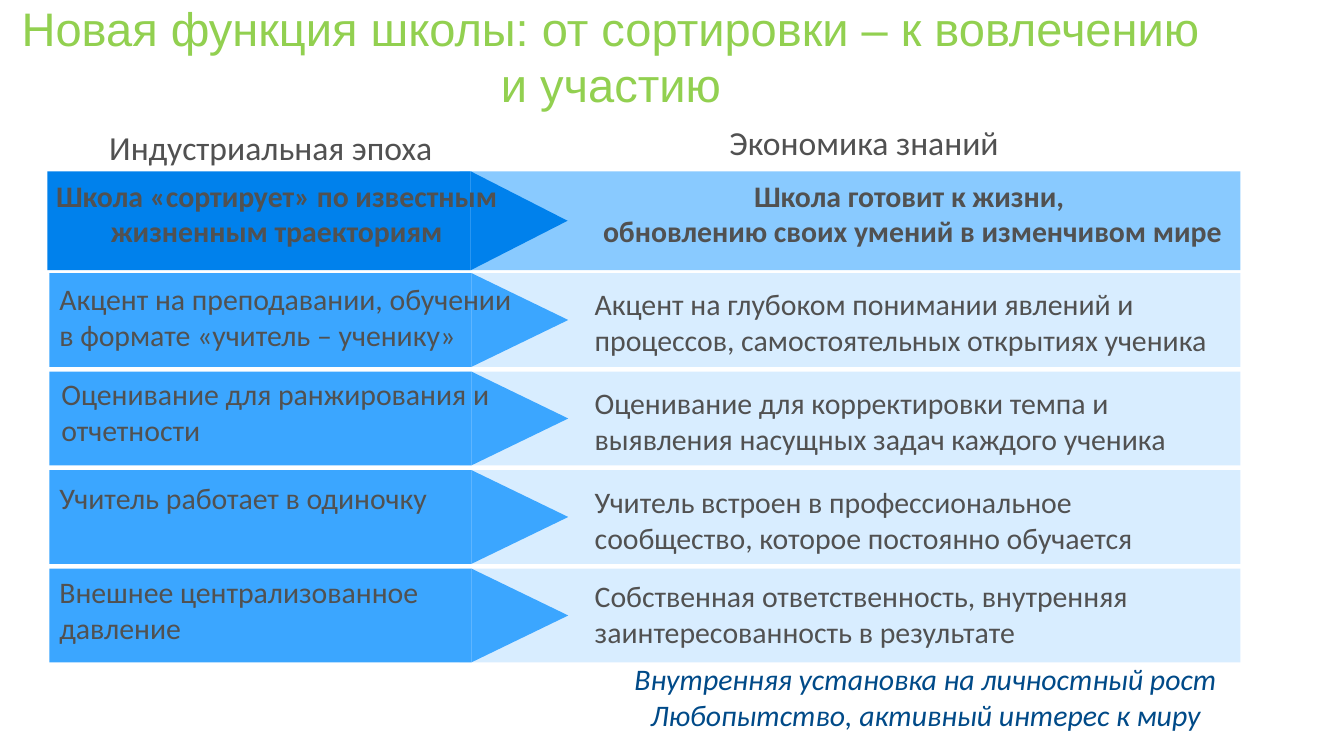
from pptx import Presentation
from pptx import util as u
from pptx.dml.color import RGBColor
from pptx.enum import shapes, text

COLORS = {
    "title": "92D050", "body": "515151", "note": "004A88",
    "head_arrow": "0081EC", "head_panel": "89CAFF",
    "row_arrow": "3BA6FF", "row_panel": "D8EDFF",
}
ALIGN = {"left": text.PP_ALIGN.LEFT, "center": text.PP_ALIGN.CENTER}


def write(tf, lines, size=21.3, color="body", font="Calibri", align="left",
          bold=False, italic=False, after=0):
    """Fill a text frame, one paragraph per item of lines."""
    for i, line in enumerate(lines):
        p = tf.paragraphs[0] if i == 0 else tf.add_paragraph()
        p.text = line
        p.alignment = ALIGN[align]
        p.space_after = u.Pt(after)
        for r in p.runs:
            r.font.size = u.Pt(size)
            r.font.name = font
            r.font.bold = bold
            r.font.italic = italic
            r.font.color.rgb = RGBColor.from_string(COLORS[color])


class Deck:
    """Places elements; every length is a percentage of the slide's size."""

    def __init__(self, width, height):
        self.prs = Presentation()
        self.prs.slide_width = u.Inches(width)
        self.prs.slide_height = u.Inches(height)
        self.s = self.prs.slides.add_slide(self.prs.slide_layouts[5])

    def x(self, share):
        return round(self.prs.slide_width * share / 100)

    def y(self, share):
        return round(self.prs.slide_height * share / 100)

    def box(self, left, top, width, height):
        return self.x(left), self.y(top), self.x(width), self.y(height)

    def title(self, line, *box, **fmt):
        sp = self.s.shapes.title
        sp.left, sp.top, sp.width, sp.height = self.box(*box)
        tf = sp.text_frame
        tf.word_wrap = True
        tf.auto_size = text.MSO_AUTO_SIZE.NONE
        tf.vertical_anchor = text.MSO_ANCHOR.BOTTOM
        write(tf, [line], **fmt)

    def text(self, lines, *box, **fmt):
        tf = self.s.shapes.add_textbox(*self.box(*box)).text_frame
        tf.word_wrap = True
        tf.auto_size = text.MSO_AUTO_SIZE.SHAPE_TO_FIT_TEXT
        write(tf, lines, **fmt)

    def shape(self, kind, box, color):
        sp = self.s.shapes.add_shape(kind, *box)
        sp.shadow.inherit = False
        sp.fill.solid()
        sp.fill.fore_color.rgb = RGBColor.from_string(COLORS[color])
        sp.line.fill.background()
        return sp

    def panel(self, *box, color):
        self.shape(shapes.MSO_SHAPE.RECTANGLE, self.box(*box), color)

    def arrow(self, left, top, width, height, tip, color):
        """A bar with a triangle, turned to the right, at its end."""
        self.panel(left, top, width, height, color=color)
        x, y, w, h = self.box(left + width, top, tip, height)
        turned = (x + (w - h) // 2, y + (h - w) // 2, h, w)
        sp = self.shape(shapes.MSO_SHAPE.ISOSCELES_TRIANGLE, turned, color)
        sp.rotation = 90


# Rows: left text, its left, offset and width; right text and its offset
ROWS = [
    ("Акцент на преподавании, обучении \nв формате «учитель – ученику»",
     3.68, 0.4, 39.5,
     "Акцент на глубоком понимании явлений и процессов, "
     "самостоятельных открытиях ученика", 1.07),
    ("Оценивание для ранжирования и отчетности", 3.83, -0.13, 34.3,
     "Оценивание для корректировки темпа и выявления насущных задач "
     "каждого ученика", 1.07),
    ("Учитель работает в одиночку", 3.68, 0.6, 34.3,
     "Учитель встроен в профессиональное сообщество, "
     "которое постоянно обучается", 1.2),
    ("Внешнее централизованное давление", 3.68, 0, 34.3,
     "Собственная ответственность, внутренняя заинтересованность "
     "в результате", 0.53),
]
ROW_TOP, ROW_STEP, ROW_HEIGHT = 36.13, 13.03, 12.4
HEAD_TOP, HEAD_HEIGHT = 22.67, 13.07
PANEL_LEFT, PANEL_WIDTH = 34.2, 58.1
TIP = 7.2


def main():
    deck = Deck(13.33, 7.5)

    # Title and column names
    deck.title("Новая функция школы: от сортировки – к вовлечению и участию",
               0, 0.4, 90.92, 15.07,
               size=33.6, color="title", font="Arial", align="center")
    deck.text(["Индустриальная эпоха"], 5.48, 16.13, 29.33, 6.67,
              size=24, align="center")
    deck.text(["Экономика знаний"], 51.84, 15.47, 24.91, 6.67,
              size=24, align="center")

    # Header row
    deck.panel(PANEL_LEFT, HEAD_TOP, PANEL_WIDTH, HEAD_HEIGHT,
               color="head_panel")
    deck.arrow(3.53, HEAD_TOP, 31.5, HEAD_HEIGHT, TIP, "head_arrow")
    deck.text(["Школа «сортирует» по известным жизненным траекториям"],
              2.7, 22.8, 35.78, 10.93, align="center", bold=True)
    deck.text(["Школа готовит к жизни, \n"
               "обновлению своих умений в изменчивом мире"],
              43.44, 22.8, 48.91, 10.93, align="center", bold=True)

    # Comparison rows
    for i, (old, left, old_dy, width, new, new_dy) in enumerate(ROWS):
        top = ROW_TOP + i * ROW_STEP
        deck.panel(PANEL_LEFT, top, PANEL_WIDTH, ROW_HEIGHT,
                   color="row_panel")
        deck.arrow(3.68, top, 31.4, ROW_HEIGHT, TIP, "row_arrow")
        deck.text([old], left, top + old_dy, width, 10.93, after=8)
        deck.text([new], 43.51, top + new_dy, 48.76, 10.93, after=8)

    # Closing note
    deck.text(["Внутренняя установка на личностный рост",
               "Любопытство, активный интерес к миру"],
              45.46, 86.8, 46.81, 10.93,
              color="note", align="center", italic=True)

    deck.prs.save("out.pptx")


if __name__ == "__main__":
    main()
